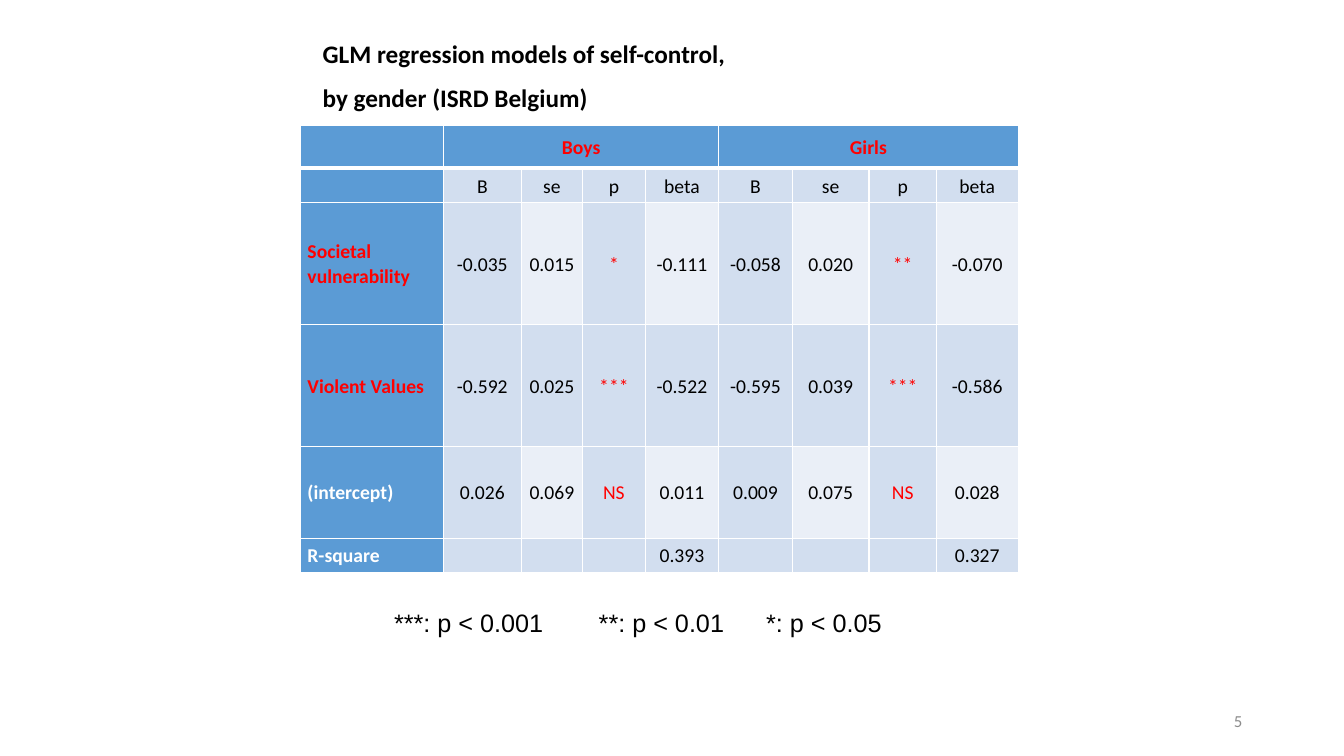
from lxml import etree
from pptx import Presentation
from pptx.dml.color import RGBColor
from pptx.enum.text import MSO_ANCHOR, PP_ALIGN
from pptx.oxml.ns import qn
from pptx.util import Inches, Pt

LEFT, MID, RIGHT = PP_ALIGN.LEFT, PP_ALIGN.CENTER, PP_ALIGN.RIGHT
CENTRE = MSO_ANCHOR.MIDDLE
BLUE, PALE, LIGHT = "5B9BD5", "D2DEEF", "EAEFF7"
RED, BLACK, WHITE, GREY = "FF0000", "000000", "FFFFFF", "8C8C8C"


def style(frame, size, color, bold=False, font="Calibri", align=LEFT, after=8):
    """Format every paragraph and run of a text frame."""
    frame.word_wrap = True
    for para in frame.paragraphs:
        para.alignment = align
        para.line_spacing = 1.07 if after else 1.0
        para.space_after = Pt(after)
        for run in para.runs:
            run.font.name, run.font.size, run.font.bold = font, Pt(size), bold
            run.font.color.rgb = RGBColor.from_string(color)


def label(text, left, top, width, height):
    box = slide.shapes.add_textbox(*map(Inches, (left, top, width, height)))
    box.text_frame.text = text
    return box.text_frame


deck = Presentation()
deck.slide_width, deck.slide_height = Inches(13.33), Inches(7.5)
slide = deck.slides.add_slide(deck.slide_layouts[6])

# Title
title = label("GLM regression models of self-control,\nby gender (ISRD Belgium)",
              3.05, 0.31, 7.45, 0.85)
title.margin_left = Inches(0.15)
style(title, 18, BLACK, bold=True)

# Regression table
heads = ["B", "se", "p", "beta"]
rows = [
    ["", "Boys", "", "", "", "Girls", "", "", ""],
    [""] + heads * 2,
    ["Societal vulnerability", "-0.035", "0.015", "*", "-0.111",
     "-0.058", "0.020", "**", "-0.070"],
    ["Violent Values", "-0.592", "0.025", "***", "-0.522",
     "-0.595", "0.039", "***", "-0.586"],
    ["(intercept)", "0.026", "0.069", "NS", "0.011",
     "0.009", "0.075", "NS", "0.028"],
    ["R-square", "", "", "", "0.393", "", "", "", "0.327"],
]
widths = [1.42, 0.77, 0.61, 0.62, 0.73, 0.73, 0.76, 0.67, 0.81]
heights = [0.43, 0.34, 1.21, 1.21, 0.91, 0.34]
table = slide.shapes.add_table(
    len(rows), len(widths), Inches(2.98), Inches(1.24),
    Inches(sum(widths)), Inches(sum(heights))).table
for col, width in zip(table.columns, widths):
    col.width = Inches(width)
for row, height in zip(table.rows, heights):
    row.height = Inches(height)
for start in (1, 5):
    table.cell(0, start).merge(table.cell(0, start + 3))

for r, row in enumerate(rows):
    for c, text in enumerate(row):
        cell = table.cell(r, c)
        cell.margin_left = cell.margin_right = Inches(0.07)
        cell.margin_top = cell.margin_bottom = 0
        cell.vertical_anchor = CENTRE
        head = r == 0 or c == 0
        if head:
            color = WHITE if r > 3 else RED
        else:
            color = RED if r > 1 and heads[(c - 1) % 4] == "p" else BLACK
        if text:
            cell.text_frame.text = text
            style(cell.text_frame, 14, color, bold=head, align=MID if c else LEFT)

        # A thick rule parts the header from the rows below
        for side in "LRTB":
            thick = (r, side) in ((0, "B"), (1, "T"))
            line = etree.SubElement(cell._tc.get_or_add_tcPr(), qn("a:ln" + side),
                                    w=str(Pt(3 if thick else 1)))
            solid = etree.SubElement(line, qn("a:solidFill"))
            etree.SubElement(solid, qn("a:srgbClr"), val=WHITE)

        striped = r in (2, 4) and c % 2 == 0
        fill = BLUE if head else LIGHT if striped else PALE
        cell.fill.solid()
        cell.fill.fore_color.rgb = RGBColor.from_string(fill)

# Significance key, spaced by tab stops
key = label("***: p < 0.001\t**: p < 0.01\t*: p < 0.05", 3.81, 5.96, 5.09, 0.43)
style(key, 18, BLACK, font="Arial")
stops = etree.SubElement(key.paragraphs[0]._p.get_or_add_pPr(), qn("a:tabLst"))
for stop in (2.03, 3.69):
    etree.SubElement(stops, qn("a:tab"), pos=str(Inches(stop)), algn="l")

# Page number
page = label("5", 9.42, 6.95, 3, 0.4)
page.vertical_anchor = CENTRE
style(page, 12, GREY, align=RIGHT, after=0)

deck.save("out.pptx")
